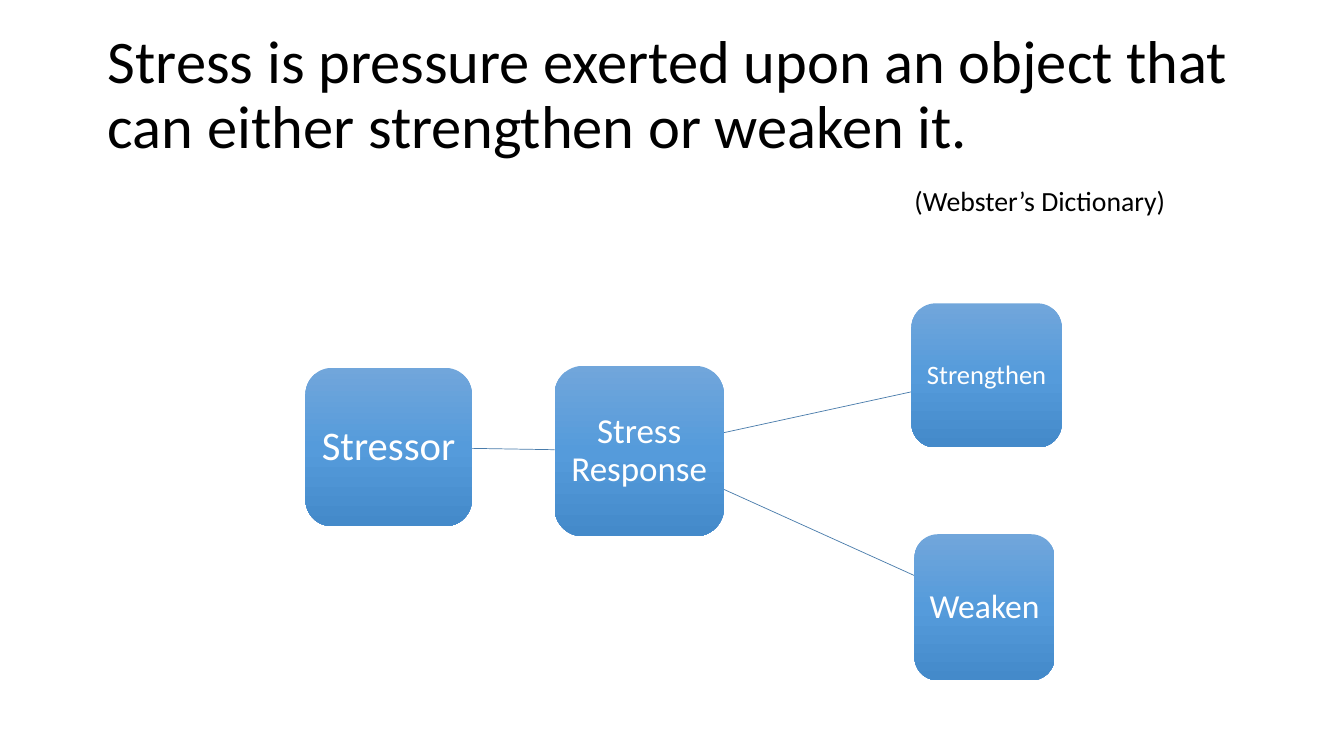
from lxml import etree
from pptx import Presentation
from pptx.dml.color import RGBColor
from pptx.enum.shapes import MSO_CONNECTOR, MSO_SHAPE
from pptx.enum.text import MSO_ANCHOR, MSO_AUTO_SIZE, PP_ALIGN
from pptx.oxml.ns import qn
from pptx.util import Pt

PX = 9144
FONT = "Calibri"
LINE = MSO_CONNECTOR.STRAIGHT
ROUND = MSO_SHAPE.ROUNDED_RECTANGLE
TOP, MIDDLE = MSO_ANCHOR.TOP, MSO_ANCHOR.MIDDLE
CENTER = PP_ALIGN.CENTER
NO_FIT = MSO_AUTO_SIZE.NONE
STOPS = [(0, "71A6DB"), (50, "559BDB"), (100, "448ACA")]
NODES = {
    "Stressor": ((303, 365, 165, 157), 29),
    "Stress Response": ((550, 363, 168, 169), 25),
    "Strengthen": ((904, 301, 149, 143), 19),
    "Weaken": ((907, 530, 139, 145), 24),
}
LINKS = [("Stressor", "Stress Response"),
         ("Stress Response", "Strengthen"),
         ("Stress Response", "Weaken")]


def px(*nums):
    """Turn pixel lengths into whole EMU."""
    return [round(num * PX) for num in nums]


def color(code):
    """Return the colour of a hex string."""
    return RGBColor.from_string(code)


def write(para, text, size, code):
    """Add one run to a paragraph."""
    para.line_spacing = 0.9
    run = para.add_run()
    run.text = text
    run.font.name = FONT
    run.font.size = Pt(size)
    run.font.color.rgb = color(code)


def shade(shape):
    """Fill a shape with the blue gradient, top to bottom."""
    shape.fill.gradient()
    shape.fill.gradient_angle = 270
    stops = shape._element.spPr.find(".//" + qn("a:gsLst"))
    for old in list(stops):
        stops.remove(old)
    for pos, code in STOPS:
        stop = etree.SubElement(stops, qn("a:gs"), pos=str(pos * 1000))
        etree.SubElement(stop, qn("a:srgbClr"), val=code)


def add_title(slide, box):
    """Place the definition and, below it, its credit."""
    title = slide.shapes.title
    title.left, title.top, title.width, title.height = px(*box)
    frame = title.text_frame
    frame.word_wrap = True
    frame.auto_size = NO_FIT
    frame.vertical_anchor = TOP
    frame.margin_left, frame.margin_top = px(10, 1)
    head = frame.paragraphs[0]
    write(head, "Stress is pressure exerted upon an object that "
          "can either strengthen or weaken it.", 43.2, "000000")
    credit = frame.add_paragraph()
    props = credit._p.get_or_add_pPr()
    props.set("marL", str(800 * PX))
    props.set("indent", "0")
    credit.space_before = Pt(18)
    write(credit, "(Webster’s Dictionary)", 19.8, "000000")
    for para in frame.paragraphs:
        para.alignment = PP_ALIGN.LEFT


def add_node(slide, box, text, size):
    """Place one rounded box with its label."""
    node = slide.shapes.add_shape(ROUND, *px(*box))
    node.shadow.inherit = False
    shade(node)
    node.line.fill.background()
    frame = node.text_frame
    frame.word_wrap = True
    frame.vertical_anchor = MIDDLE
    frame.margin_left = frame.margin_right = 0
    frame.margin_top = frame.margin_bottom = 0
    para = frame.paragraphs[0]
    para.alignment = CENTER
    write(para, text, size, "FFFFFF")


def add_link(slide, start, end):
    """Join two boxes along their centres, from side to side."""
    (x1, y1, w1, h1), (x2, y2, w2, h2) = start, end
    mid1, mid2 = y1 + h1 / 2, y2 + h2 / 2
    slope = (mid2 - mid1) / (x2 + w2 / 2 - x1 - w1 / 2)
    ends = px(x1 + w1, mid1 + slope * w1 / 2, x2, mid2 - slope * w2 / 2)
    link = slide.shapes.add_connector(LINE, *ends)
    link.line.color.rgb = color("497CAB")
    link.line.width = Pt(0.5)
    etree.SubElement(link._element.spPr, qn("a:effectLst"))


def add_chain(slide):
    """Draw the stress diagram."""
    for start, end in LINKS:
        add_link(slide, NODES[start][0], NODES[end][0])
    for text, (box, size) in NODES.items():
        add_node(slide, box, text, size)


def main():
    """Build and save the slide."""
    deck = Presentation()
    deck.slide_width, deck.slide_height = px(1333, 750)
    slide = deck.slides.add_slide(deck.slide_layouts[5])
    add_title(slide, (97, 30, 1150, 266))
    add_chain(slide)
    deck.save("out.pptx")


if __name__ == "__main__":
    main()
